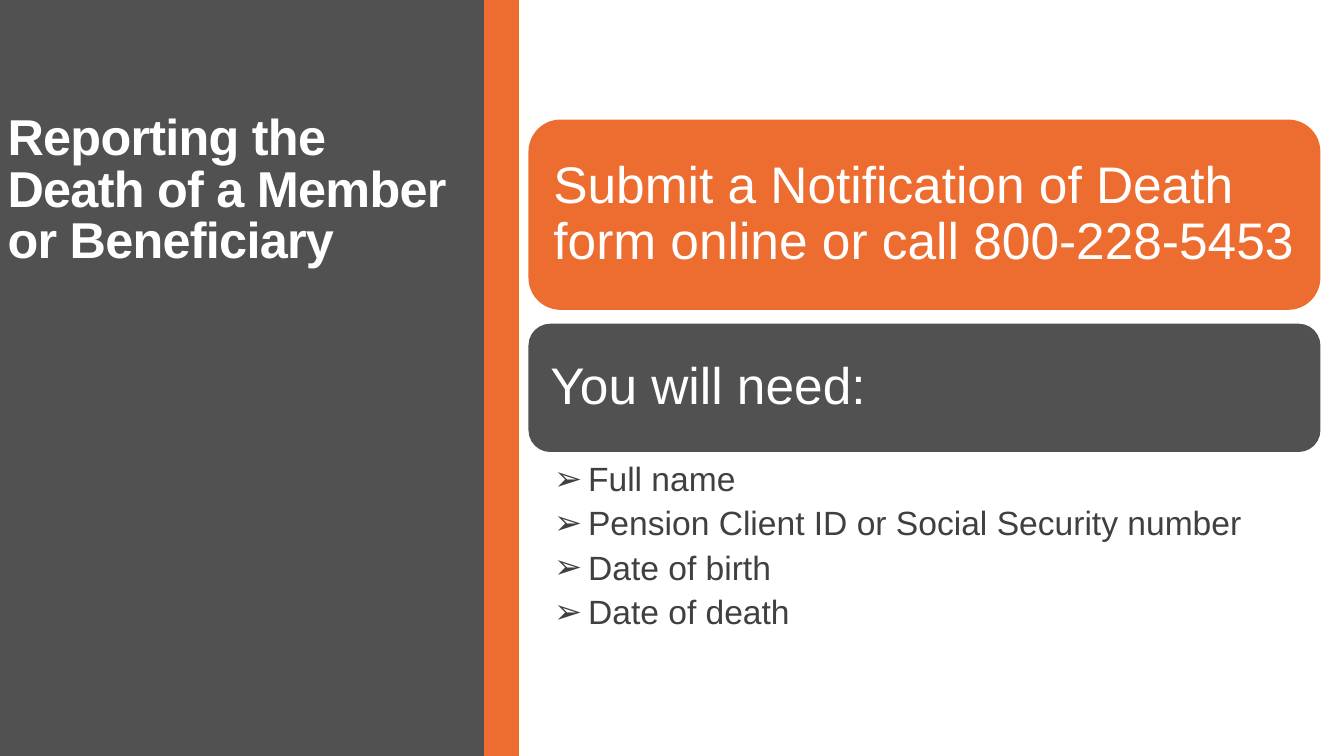
from lxml import etree
from pptx import Presentation
from pptx import util as u
from pptx.dml.color import RGBColor
from pptx.enum import shapes, text
from pptx.oxml import ns

COLORS = {"grey": "515151", "orange": "ED6D30", "white": "FFFFFF", "body": "404040"}
FONT = "Arial"
NEEDED = ["Full name", "Pension Client ID or Social Security number",
          "Date of birth", "Date of death"]


def rgb(name):
    return RGBColor.from_string(COLORS[name])


def place(sp, left, top, width, height):
    sp.left, sp.top, sp.width, sp.height = map(u.Inches, (left, top, width, height))


def add_block(s, kind, box, color):
    sp = s.shapes.add_shape(kind, *map(u.Inches, box))
    sp.shadow.inherit = False
    sp.fill.solid()
    sp.fill.fore_color.rgb = rgb(color)
    sp.line.color.rgb = rgb(color)
    sp.line.width = u.Pt(1.25)
    return sp


def set_frame(tf, anchor, left, top, right, bottom):
    tf.word_wrap = True
    tf.auto_size = text.MSO_AUTO_SIZE.NONE
    tf.vertical_anchor = anchor
    tf.margin_left, tf.margin_top = u.Inches(left), u.Inches(top)
    tf.margin_right, tf.margin_bottom = u.Inches(right), u.Inches(bottom)


def add_text(p, words, size, color, spacing, bold=False):
    p.alignment = text.PP_ALIGN.LEFT
    p.line_spacing = spacing
    p.space_before = u.Pt(0)
    r = p.add_run()
    r.text = words
    r.font.name, r.font.size, r.font.bold = FONT, u.Pt(size), bold
    r.font.color.rgb = rgb(color)
    return r


def add_banner(s, box, color, words):
    sp = add_block(s, shapes.MSO_SHAPE.ROUNDED_RECTANGLE, box, color)
    tf = sp.text_frame
    set_frame(tf, text.MSO_ANCHOR.MIDDLE, 0.2, 0.2, 0.15, 0.2)
    add_text(tf.paragraphs[0], words, 49, "white", 0.9)


def fill_title(sp, words):
    place(sp, 0, 0.87, 6.24, 3.33)
    tf = sp.text_frame
    set_frame(tf, text.MSO_ANCHOR.MIDDLE, 0.1, 0.05, 0.1, 0.05)
    r = add_text(tf.paragraphs[0], words, 48, "white", 0.85, bold=True)
    r.font._element.set("spc", "-70")


def fill_list(sp, items):
    place(sp, 7, 6.08, 10.46, 2.25)
    tf = sp.text_frame
    set_frame(tf, text.MSO_ANCHOR.TOP, 0.33, 0.04, 0.25, 0.04)
    for i, item in enumerate(items):
        p = tf.add_paragraph() if i else tf.paragraphs[0]
        pPr = p._p.get_or_add_pPr()
        indent = u.Inches(0.45)
        pPr.set("marL", str(indent))
        pPr.set("indent", str(-indent))
        etree.SubElement(pPr, ns.qn("a:buChar"), char="➢")
        add_text(p, item, 32, "body", 0.9)
        p.space_after = u.Pt(7.5)


def main():
    prs = Presentation()
    prs.slide_width, prs.slide_height = u.Inches(17.78), u.Inches(10)
    s = prs.slides.add_slide(prs.slide_layouts[1])
    title, body = s.placeholders

    # Side panel and accent stripe, kept behind the title
    add_block(s, shapes.MSO_SHAPE.RECTANGLE, (0, 0, 6.41, 10), "grey")
    add_block(s, shapes.MSO_SHAPE.RECTANGLE, (6.41, 0, 0.45, 10), "orange")
    s.shapes._spTree.append(title._element)
    fill_title(title, "Reporting the Death of a Member or Beneficiary")

    # Banners
    add_banner(s, (7, 1.59, 10.46, 2.5), "orange",
               "Submit a Notification of Death form online or call 800-228-5453")
    add_banner(s, (7, 4.29, 10.46, 1.68), "grey", "You will need:")

    # Required details
    s.shapes._spTree.append(body._element)
    fill_list(body, NEEDED)

    prs.save("out.pptx")


if __name__ == "__main__":
    main()
